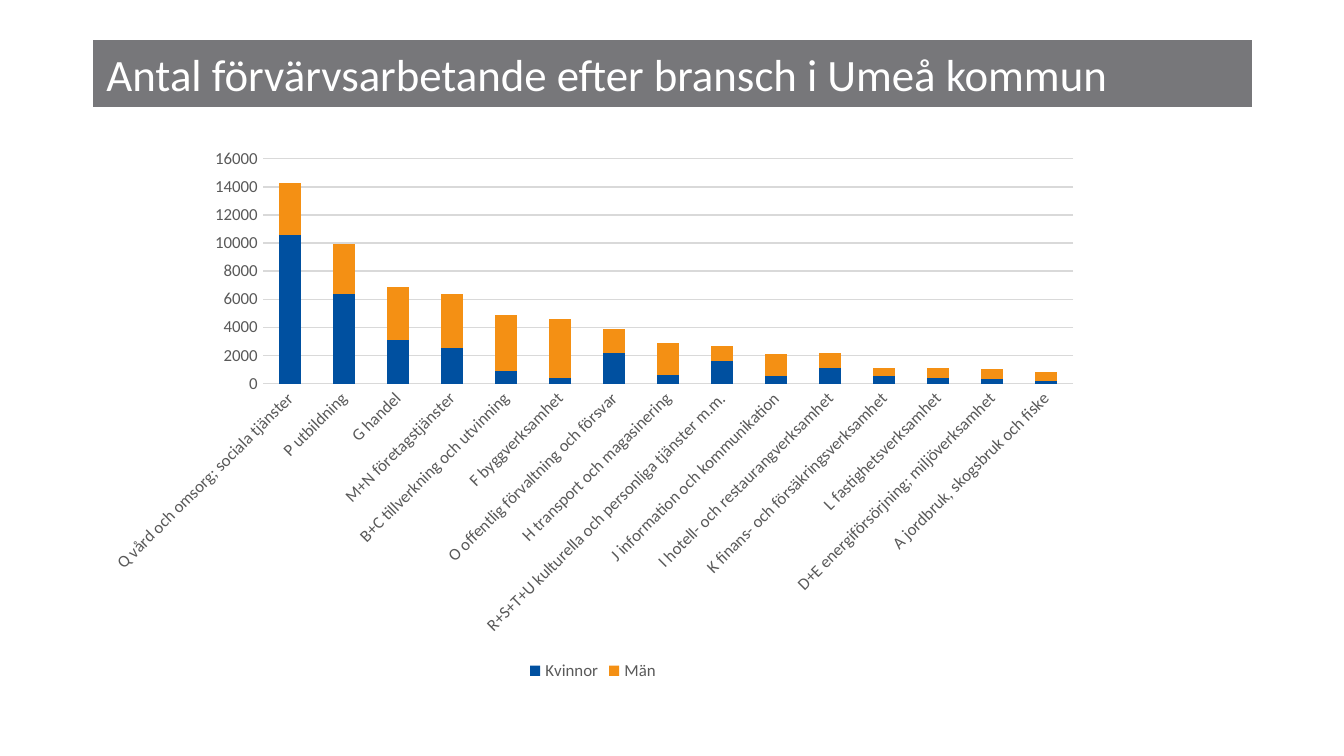
from pptx import Presentation
from pptx.chart.data import CategoryChartData
from pptx.dml.color import RGBColor
from pptx.enum.chart import XL_CHART_TYPE, XL_LEGEND_POSITION, XL_TICK_MARK
from pptx.enum.text import MSO_ANCHOR, MSO_AUTO_SIZE, PP_ALIGN
from pptx.util import Pt

TITLE = "Antal förvärvsarbetande efter bransch i Umeå kommun"
ROWS = [
    ("Q vård och omsorg; sociala tjänster", 10600, 3700),
    ("P utbildning", 6400, 3500),
    ("G handel", 3100, 3800),
    ("M+N företagstjänster", 2500, 3900),
    ("B+C tillverkning och utvinning", 900, 4000),
    ("F byggverksamhet", 400, 4200),
    ("O offentlig förvaltning och försvar", 2200, 1700),
    ("H transport och magasinering", 600, 2300),
    ("R+S+T+U kulturella och personliga tjänster m.m.", 1600, 1100),
    ("J information och kommunikation", 500, 1600),
    ("I hotell- och restaurangverksamhet", 1100, 1100),
    ("K finans- och försäkringsverksamhet", 500, 600),
    ("L fastighetsverksamhet", 400, 700),
    ("D+E energiförsörjning; miljöverksamhet", 300, 700),
    ("A jordbruk, skogsbruk och fiske", 200, 600),
]
SERIES = [("Kvinnor", "blue"), ("Män", "orange")]
COLORS = {"bar": "77777A", "white": "FFFFFF", "text": "595959",
          "grid": "D9D9D9", "blue": "0050A0", "orange": "F49014"}
FONT = "Calibri"
SCALE = 914400 / 134.4


def px(n):
    return round(n * SCALE)


def color(name):
    return RGBColor.from_string(COLORS[name])


def style(font, size, tint):
    font.name = FONT
    font.size = Pt(size)
    font.bold = False
    font.color.rgb = color(tint)


def paint(fill, tint):
    fill.solid()
    fill.fore_color.rgb = color(tint)


def rule(line):
    line.color.rgb = color("grid")
    line.width = Pt(0.75)


def write(shape, text, size, tint, align=PP_ALIGN.LEFT):
    frame = shape.text_frame
    frame.text = text
    frame.word_wrap = True
    frame.auto_size = MSO_AUTO_SIZE.NONE
    frame.vertical_anchor = MSO_ANCHOR.MIDDLE
    para = frame.paragraphs[0]
    para.alignment = align
    style(para.runs[0].font, size, tint)


def add_title(slide):
    title = slide.shapes.title
    title.left, title.top, title.width, title.height = map(px, (93, 40, 1159, 67))
    paint(title.fill, "bar")
    write(title, TITLE, size=24, tint="white")


def add_bars(slide):
    names, *cols = zip(*ROWS)
    data = CategoryChartData(number_format="0")
    data.categories = names
    for (name, _), vals in zip(SERIES, cols):
        data.add_series(name, vals)
    chart = slide.shapes.add_chart(
        XL_CHART_TYPE.COLUMN_STACKED, *map(px, (93, 138, 1000, 548)), data).chart
    chart.has_title = False
    chart.font.name = FONT
    chart.font.size = Pt(10)

    plot = chart.plots[0]
    plot.gap_width = 150
    plot.overlap = 100
    plot.vary_by_categories = False
    for series, (_, tint) in zip(plot.series, SERIES):
        paint(series.format.fill, tint)

    cat, val = chart.category_axis, chart.value_axis
    for axis in (cat, val):
        axis.major_tick_mark = axis.minor_tick_mark = XL_TICK_MARK.NONE
        style(axis.tick_labels.font, 9, "text")
    cat.has_major_gridlines = False
    rule(cat.format.line)
    cat._element.txPr.bodyPr.set("rot", "-2700000")
    val.minimum_scale, val.maximum_scale, val.major_unit = 0, 16000, 2000
    val.format.line.fill.background()
    rule(val.major_gridlines.format.line)

    chart.has_legend = True
    chart.legend.position = XL_LEGEND_POSITION.BOTTOM
    chart.legend.include_in_layout = False
    style(chart.legend.font, 9, "text")


def main():
    deck = Presentation()
    deck.slide_width, deck.slide_height = px(1344), px(756)
    slide = deck.slides.add_slide(deck.slide_layouts[5])
    add_title(slide)
    add_bars(slide)
    deck.save("out.pptx")


if __name__ == "__main__":
    main()
